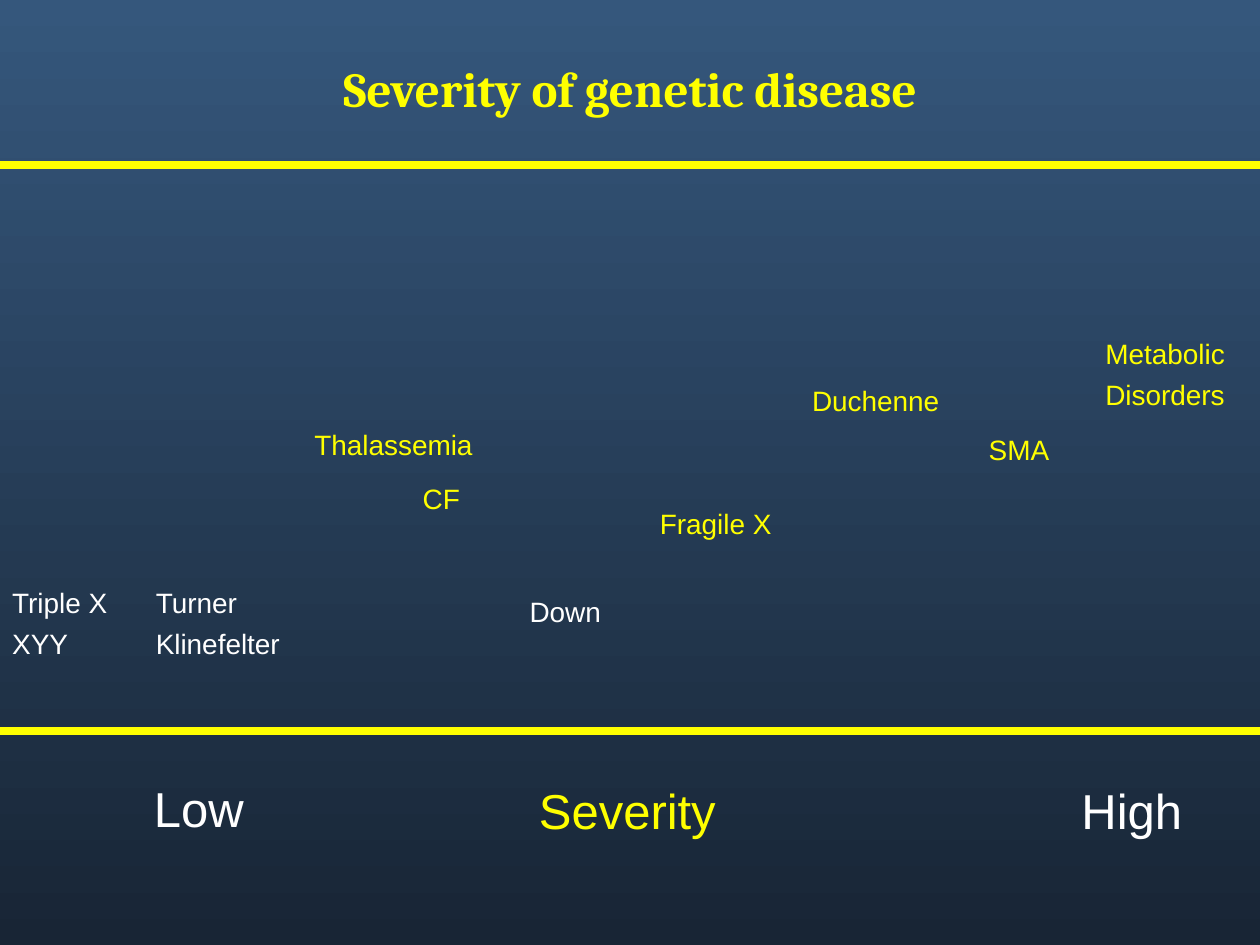
from dataclasses import dataclass

from lxml.etree import SubElement
from pptx import Presentation
from pptx.dml.color import RGBColor
from pptx.enum.shapes import MSO_CONNECTOR
from pptx.enum.text import MSO_ANCHOR, PP_ALIGN
from pptx.oxml.ns import qn
from pptx.util import Pt

YELLOW = "FFFF00"
WHITE = "FFFFFF"
SLIDE_W, SLIDE_H = 720, 540


@dataclass
class Label:
    lines: tuple[str, ...]
    left: float
    top: float
    width: float
    color: str = YELLOW
    size: float = 16


LABELS = [
    Label(("Triple X", "XYY"), 7, 334.6, 75, WHITE),
    Label(("Turner", "Klinefelter"), 89, 334.6, 90, WHITE),
    Label(("Down",), 302.6, 339.8, 60, WHITE),
    Label(("Thalassemia",), 179.6, 244.4, 110),
    Label(("CF",), 241.5, 275.2, 40),
    Label(("Fragile X",), 377, 289.5, 85),
    Label(("Duchenne",), 464, 219.2, 95),
    Label(("SMA",), 565, 247.2, 55),
    Label(("Metabolic", "Disorders"), 631.6, 192.4, 85),
    Label(("Low",), 88, 445, 80, WHITE, 28),
    Label(("Severity",), 308, 446, 130, YELLOW, 28),
    Label(("High",), 618, 446, 80, WHITE, 28),
]


def rgb(value: str) -> RGBColor:
    return RGBColor.from_string(value)


def write(p, text, *, size=16, color=WHITE, font="Arial", bold=False, align=PP_ALIGN.LEFT):
    p.alignment = align
    r = p.add_run()
    r.text = text
    r.font.size = Pt(size)
    r.font.name = font
    r.font.bold = bold
    r.font.color.rgb = rgb(color)


def paint_background(s) -> None:
    fill = s.background.fill
    fill.gradient()
    fill.gradient_angle = 270
    for stop, position, color in zip(fill.gradient_stops, (0, 1), ("35577C", "182535")):
        stop.position = position
        stop.color.rgb = rgb(color)


def draw_title(s, text: str) -> None:
    sp = s.shapes.title
    sp.left, sp.top, sp.width, sp.height = Pt(54), Pt(0), Pt(612), Pt(100)
    tf = sp.text_frame
    tf.vertical_anchor = MSO_ANCHOR.MIDDLE
    write(tf.paragraphs[0], text, size=28, color=YELLOW, font="Cambria",
          bold=True, align=PP_ALIGN.CENTER)


def draw_rule(s, y: float) -> None:
    line = s.shapes.add_connector(MSO_CONNECTOR.STRAIGHT, Pt(0), Pt(y), Pt(SLIDE_W), Pt(y))
    line.line.color.rgb = rgb(YELLOW)
    line.line.width = Pt(4.5)
    SubElement(line._element.spPr, qn("a:effectLst"))


def draw_label(s, label: Label) -> None:
    height = label.size * 1.4 * len(label.lines)
    sp = s.shapes.add_textbox(Pt(label.left), Pt(label.top), Pt(label.width), Pt(height))
    tf = sp.text_frame
    tf.word_wrap = True
    tf.margin_left = tf.margin_right = tf.margin_top = tf.margin_bottom = 0
    for i, text in enumerate(label.lines):
        p = tf.add_paragraph() if i else tf.paragraphs[0]
        p.space_before = Pt(4 if i else 0)
        write(p, text, size=label.size, color=label.color)


def main() -> None:
    prs = Presentation()
    prs.slide_width, prs.slide_height = Pt(SLIDE_W), Pt(SLIDE_H)
    s = prs.slides.add_slide(prs.slide_layouts[5])
    paint_background(s)
    draw_title(s, "Severity of genetic disease")
    for y in (94.3, 417.5):
        draw_rule(s, y)
    for label in LABELS:
        draw_label(s, label)
    prs.save("out.pptx")


if __name__ == "__main__":
    main()
